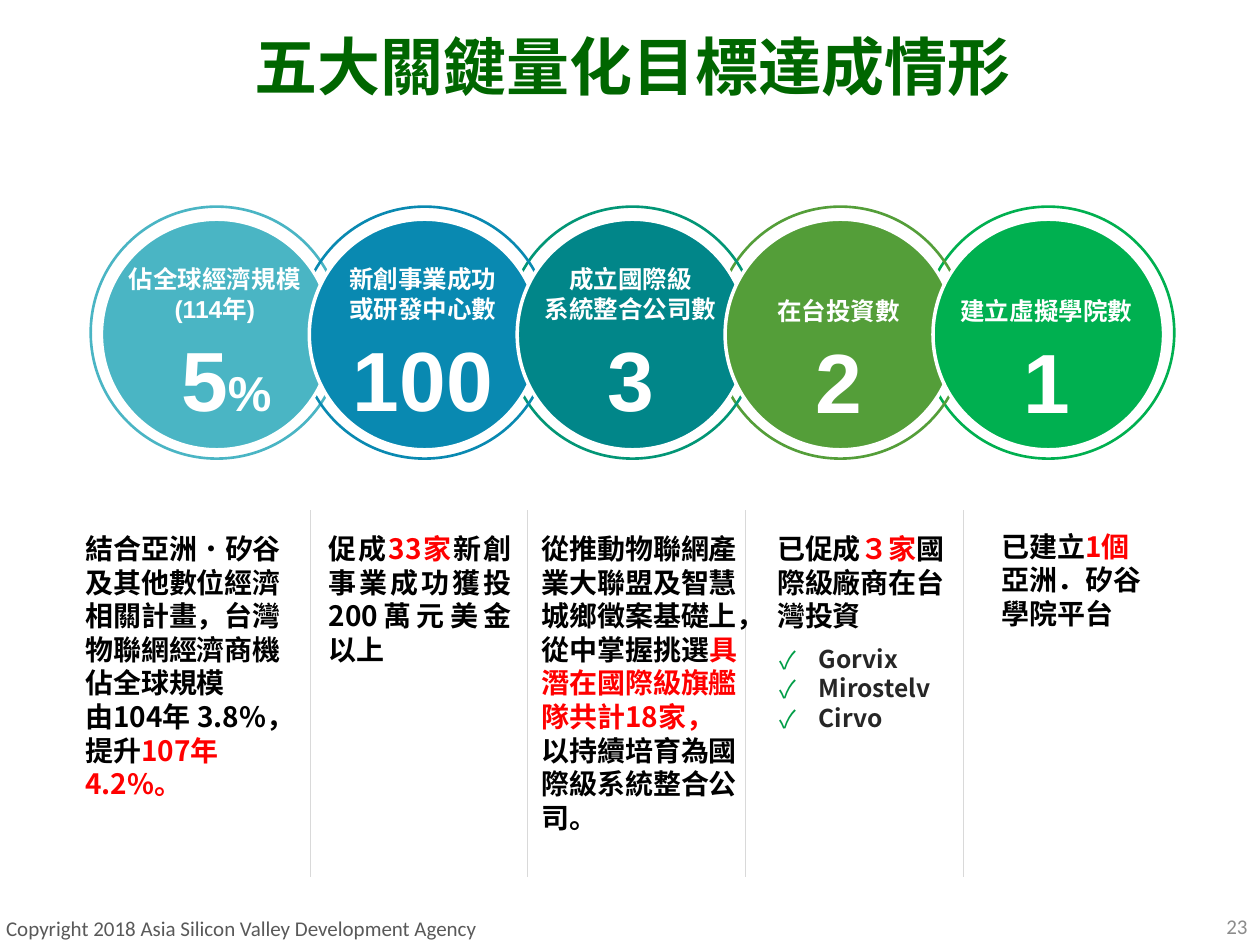
from lxml import etree
from pptx import Presentation
from pptx import util as u
from pptx.dml.color import RGBColor
from pptx.enum import shapes, text
from pptx.oxml import ns

COLS, ROWS = 100, 75
CJK = "Noto Sans CJK SC"
WHITE, BLACK, RED = "FFFFFF", "000000", "FF0000"
AL = text.PP_ALIGN
MID = text.MSO_ANCHOR.MIDDLE


def paint(code):
    return RGBColor.from_string(code)


def sub(node, tag, **attrs):
    return etree.SubElement(node, ns.qn(tag), **attrs)


class Deck:
    """Style and current slide; lengths are cells of a 100 by 75 grid."""

    def __init__(self):
        self.prs = Presentation()
        self.prs.slide_width = u.Inches(10)
        self.prs.slide_height = u.Inches(7.5)
        self.slide = self.prs.slides.add_slide(self.prs.slide_layouts[6])

    def grid(self, x, y):
        return (round(x * self.prs.slide_width / COLS),
                round(y * self.prs.slide_height / ROWS))

    def disc(self, x, y, size, fill, line, width):
        item = self.slide.shapes.add_shape(
            shapes.MSO_SHAPE.OVAL, *self.grid(x, y), *self.grid(size, size))
        item.shadow.inherit = False
        if fill:
            item.fill.solid()
            item.fill.fore_color.rgb = paint(fill)
        else:
            item.fill.background()
        item.line.color.rgb = paint(line)
        item.line.width = u.Pt(width)

    def rule(self, x, top, end, color):
        line = self.slide.shapes.add_connector(
            shapes.MSO_CONNECTOR.STRAIGHT, *self.grid(x, top), *self.grid(x, end))
        line.line.color.rgb = paint(color)
        line.line.width = u.Pt(0.25)
        sub(line._element.spPr, "a:effectLst")

    def box(self, x, y, w, h, anchor=text.MSO_ANCHOR.TOP):
        frame = self.slide.shapes.add_textbox(
            *self.grid(x, y), *self.grid(w, h)).text_frame
        frame.word_wrap = True
        frame.vertical_anchor = anchor
        return frame

    def para(self, frame, runs, align=AL.LEFT, space=None, left=0, tick=None):
        """Fill the empty first paragraph or add one; runs are (words, style)."""
        first = frame.paragraphs[0]
        par = first if not first.runs else frame.add_paragraph()
        par.alignment = align
        if space:
            par.line_spacing = space
        props = par._p.get_or_add_pPr()
        if left:
            props.set("marL", str(u.Inches(left)))
        if tick:
            props.set("indent", str(u.Inches(-0.31)))
            sub(sub(props, "a:buClr"), "a:srgbClr", val=tick)
            sub(props, "a:buFont", typeface=CJK)
            sub(props, "a:buChar", char="✓")
        for words, style in runs:
            self.run(par, words, **style)

    def run(self, par, words, size=16, color=BLACK, bold=True, face=CJK):
        run = par.add_run()
        run.text = words
        font = run.font
        font.size, font.bold, font.name = u.Pt(size), bold, face
        font.color.rgb = paint(color)
        sub(font._element, "a:ea", typeface=CJK)


GOALS = [
    ("4AB5C4", "4AB5C4", ["佔全球經濟規模", "(114年)"], "5", "%"),
    ("0989B1", "0989B1", ["新創事業成功", "或研發中心數"], "100", ""),
    ("029676", "018689", ["成立國際級", "系統整合公司數"], "3", ""),
    ("549E39", "549E39", ["在台投資數"], "2", ""),
    ("00B050", "00B050", ["建立虛擬學院數"], "1", ""),
]

PLAIN, HOT, THIN = {}, {"color": RED}, {"bold": False}
NOTES = [
    (5.8, 41.7, 19, AL.LEFT, [
        [("結合亞洲", PLAIN), ("‧", THIN),
         ("矽谷及其他數位經濟相關計畫，台灣物聯網經濟商機佔全球規模", PLAIN)],
        [("由104年 3.8%，提升", PLAIN), ("107年4.2%。", HOT)]]),
    (25.1, 41.7, 16.5, AL.JUSTIFY, [
        [("促成", PLAIN), ("33家", HOT),
         ("新創事業成功獲投200萬元美金以上", PLAIN)]]),
    (42, 41.7, 17.8, AL.LEFT, [
        [("從推動物聯網產業大聯盟及智慧城鄉徵案基礎上，從中掌握挑選", PLAIN),
         ("具潛在國際級旗艦隊共計18家，", HOT),
         ("以持續培育為國際級系統整合公司。", PLAIN)]]),
    (60.7, 41.7, 16.4, AL.LEFT, [
        [("已促成", PLAIN), ("３家", HOT), ("國際級廠商在台灣投資", PLAIN)]]),
    (78.5, 41.5, 14.8, AL.LEFT, [
        [("已建立", PLAIN), ("1個", HOT)],
        [("亞洲．矽谷學院平台", PLAIN)]]),
]


def label(deck, x, names, count, unit):
    lift = 2.5 * (2 - len(names))
    frame = deck.box(x, 20.5 + lift, 18.2, 13.7 - lift)
    for name in names:
        face = "Arial" if name.startswith("(") else CJK
        deck.para(frame, [(name, dict(size=14, color=WHITE, face=face))], AL.CENTER)
    big = dict(size=48, color=WHITE, face="Arial")
    runs = [(count, big)]
    if unit:
        runs.append((unit, dict(big, size=28)))
    deck.para(frame, runs, AL.CENTER, u.Pt(60), left=0.18 if unit else 0)


def main():
    deck = Deck()
    deck.para(deck.box(0.4, 0.1, 99.6, 11, MID),
              [("五大關鍵量化目標達成情形", dict(size=36, color="006600"))],
              AL.CENTER, 0.9)

    step = 16.5
    for i in (4, 0, 3, 2, 1):
        deck.disc(7.2 + i * step, 16.4, 20, None, GOALS[i][0], 1.5)
    for i, goal in enumerate(GOALS):
        deck.disc(8.05 + i * step, 17.4, 18.3, goal[1], WHITE, 2)
    for i, goal in enumerate(GOALS):
        label(deck, 7.95 + i * step, *goal[2:])

    for i in range(4):
        deck.rule(24.6 + i * 17.27, 40.5, 69.6, "D9D9D9")
    for x, y, w, align, paras in NOTES:
        frame = deck.box(x, y, w, 69.6 - y)
        for runs in paras:
            deck.para(frame, runs, align)

    firms = deck.box(59.7, 50.6, 15.8, 8.1)
    for firm in ("Gorvix", "Mirostelv", "Cirvo"):
        deck.para(firms, [(firm, dict(size=14, color="262626"))],
                  left=0.43, tick="009D47")

    small = dict(size=12, bold=False, face="Calibri")
    deck.para(deck.box(-0.5, 72.4, 51.2, 2.6, MID),
              [("Copyright 2018 Asia Silicon Valley Development Agency",
                dict(small, color="595959"))])
    deck.para(deck.box(95.9, 72, 4.1, 3, MID),
              [("23", dict(small, color="8C8C8C"))], AL.RIGHT)
    deck.prs.save("out.pptx")


if __name__ == "__main__":
    main()
